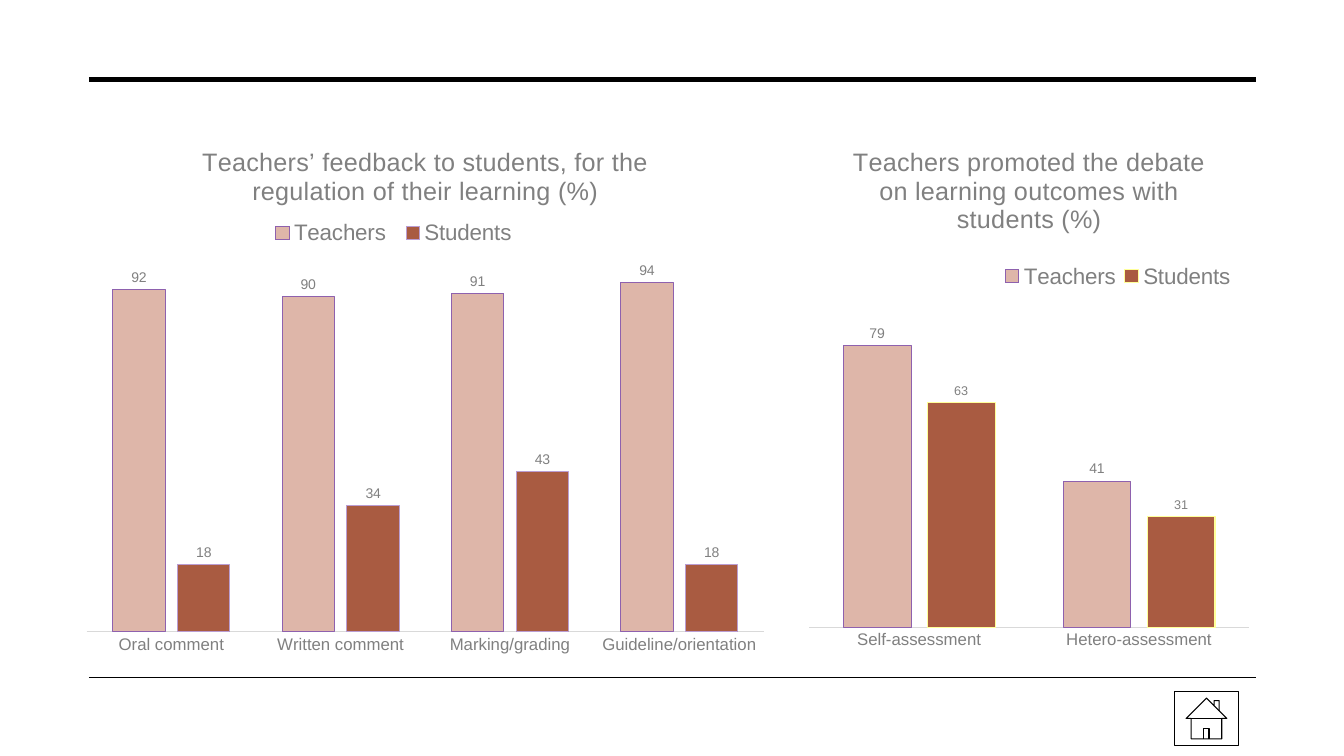
from lxml.etree import SubElement
from pptx import Presentation
from pptx.chart.data import CategoryChartData
from pptx.dml.color import RGBColor
from pptx.enum.chart import XL_CHART_TYPE, XL_LABEL_POSITION, XL_LEGEND_POSITION, XL_TICK_MARK
from pptx.enum.shapes import MSO_CONNECTOR, MSO_SHAPE
from pptx.oxml.ns import qn
from pptx.util import Cm, Pt

BLACK = RGBColor(0x00, 0x00, 0x00)
GRAY = RGBColor(0x80, 0x80, 0x80)
LIGHT_GRAY = RGBColor(0xD9, 0xD9, 0xD9)
PINK = RGBColor(0xDE, 0xB6, 0xA9)
BROWN = RGBColor(0xA9, 0x5B, 0x41)
PURPLE = RGBColor(0x8E, 0x61, 0xAE)
LILAC = RGBColor(0xBA, 0x9D, 0xD2)
YELLOW = RGBColor(0xFF, 0xFF, 0x99)


class SlideBuilder:
    font_name = "Arial"
    thin_line = Pt(0.75)

    def __init__(self, presentation):
        self.slide = presentation.slides.add_slide(presentation.slide_layouts[6])

    def style_font(self, font, size, color=GRAY):
        font.name = self.font_name
        font.size = Pt(size)
        font.bold = False
        font.color.rgb = color

    def style_line(self, line, color, width=thin_line):
        line.color.rgb = color
        line.width = width

    def add_rule(self, left, right, top, width):
        connector = self.slide.shapes.add_connector(
            MSO_CONNECTOR.STRAIGHT, Cm(left), Cm(top), Cm(right), Cm(top))
        self.style_line(connector.line, BLACK, Pt(width))
        SubElement(connector._element.spPr, qn("a:effectLst"))

    def add_home_button(self, left, top, width, height):
        shape = self.slide.shapes.add_shape(
            MSO_SHAPE.ACTION_BUTTON_HOME, Cm(left), Cm(top), Cm(width), Cm(height))
        shape.shadow.inherit = False
        shape.fill.background()
        self.style_line(shape.line, BLACK)

    def set_layout(self, element, box, inner=False):
        layout = element.find(qn("c:layout"))
        if layout is None:
            layout = SubElement(element, qn("c:layout"))
            element.remove(layout)
            element.insert(1 if element.tag == qn("c:legend") else 0, layout)
        manual = SubElement(layout, qn("c:manualLayout"))
        if inner:
            SubElement(manual, qn("c:layoutTarget")).set("val", "inner")
        for name in ("xMode", "yMode"):
            SubElement(manual, qn("c:" + name)).set("val", "edge")
        for name, value in zip("xywh", box):
            SubElement(manual, qn("c:" + name)).set("val", str(value))

    def add_title(self, chart, title):
        text_frame = chart.chart_title.text_frame
        text_frame.text = title
        for run in text_frame.paragraphs[0].runs:
            self.style_font(run.font, 18)
            run._r.get_or_add_rPr().set("spc", "20")
        chart.chart_title.include_in_layout = False

    def add_legend(self, chart, box):
        chart.has_legend = True
        chart.legend.position = XL_LEGEND_POSITION.TOP
        chart.legend.include_in_layout = False
        self.style_font(chart.legend.font, 16)
        self.set_layout(chart.legend._element, box)

    def style_axes(self, chart):
        chart.value_axis.visible = False
        chart.value_axis.has_major_gridlines = False
        chart.value_axis.minimum_scale = 0
        chart.value_axis.maximum_scale = 100
        category_axis = chart.category_axis
        category_axis.major_tick_mark = XL_TICK_MARK.NONE
        category_axis.minor_tick_mark = XL_TICK_MARK.NONE
        self.style_font(category_axis.tick_labels.font, 12)
        self.style_line(category_axis.format.line, LIGHT_GRAY)

    def add_column_chart(self, frame, title, categories, series_styles, legend_box, plot_box):
        data = CategoryChartData()
        data.categories = categories
        for name, values, *_ in series_styles:
            data.add_series(name, values)
        chart = self.slide.shapes.add_chart(
            XL_CHART_TYPE.COLUMN_CLUSTERED, *map(Cm, frame), data).chart
        self.style_font(chart.font, 10, BLACK)
        self.add_title(chart, title)
        self.add_legend(chart, legend_box)
        self.style_axes(chart)
        self.set_layout(chart._chartSpace.chart.plotArea, plot_box, inner=True)
        plot = chart.plots[0]
        plot.gap_width = 100
        plot.overlap = -24
        plot.vary_by_categories = False
        for series, (_, _, fill, outline, label_size) in zip(plot.series, series_styles):
            series.format.fill.solid()
            series.format.fill.fore_color.rgb = fill
            self.style_line(series.format.line, outline)
            labels = series.data_labels
            labels.show_value = True
            labels.position = XL_LABEL_POSITION.OUTSIDE_END
            self.style_font(labels.font, label_size)


def main():
    presentation = Presentation()
    presentation.slide_width = Cm(33.87)
    presentation.slide_height = Cm(19.05)
    builder = SlideBuilder(presentation)
    builder.add_rule(2.24, 31.65, 2.01, 3.5)
    builder.add_rule(2.24, 31.65, 17.07, 1)
    builder.add_column_chart(
        (1.83, 3.15, 17.78, 13.59),
        "Teachers’ feedback to students, for the regulation of their learning (%)",
        ("Oral comment", "Written comment", "Marking/grading", "Guideline/orientation"),
        (("Teachers", (92, 90, 91, 94), PINK, PURPLE, 10),
         ("Students", (18, 34, 43, 18), BROWN, LILAC, 10)),
        (0.27, 0.16, 0.37, 0.08), (0.02, 0.25, 0.96, 0.69))
    builder.add_column_chart(
        (20.04, 3.15, 11.79, 13.61),
        "Teachers promoted the debate on learning outcomes with students (%)",
        ("Self-assessment", "Hetero-assessment"),
        (("Teachers", (79, 41), PINK, PURPLE, 10),
         ("Students", (63, 31), BROWN, YELLOW, 9)),
        (0.43, 0.24, 0.52, 0.08), (0.03, 0.27, 0.94, 0.66))
    builder.add_home_button(29.59, 17.42, 1.63, 1.37)
    presentation.save("out.pptx")


if __name__ == "__main__":
    main()
